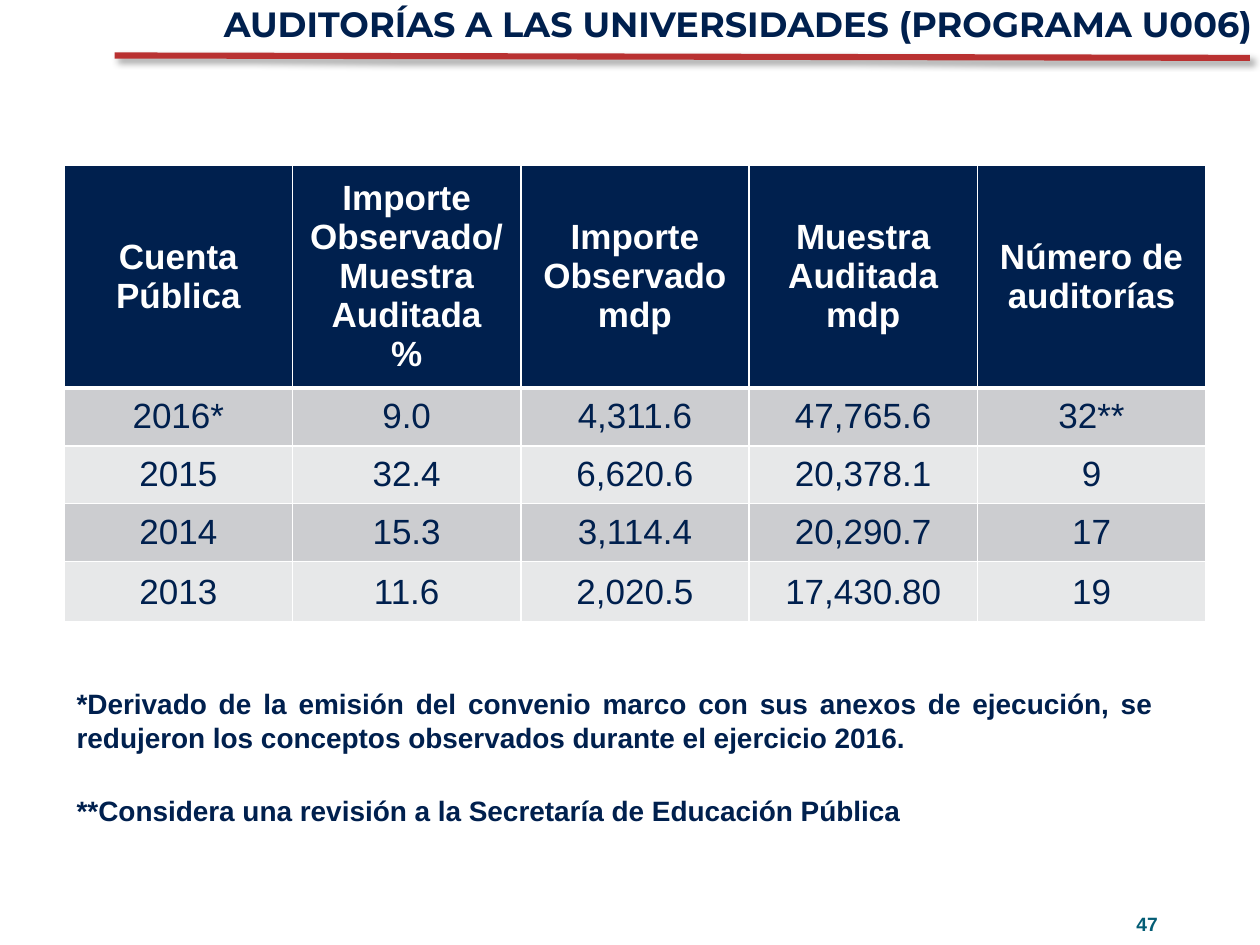
from lxml import etree
from pptx import Presentation
from pptx import util as u
from pptx.dml.color import RGBColor
from pptx.enum import shapes, text
from pptx.oxml import ns

NAVY, RED, TEAL, WHITE = "00204E", "B93131", "045D75", "FFFFFF"
BANDS = ("CCCDD0", "E7E8E9")
ALIGN = text.PP_ALIGN

HEADERS = [
    ["Cuenta Pública"],
    ["Importe Observado/Muestra Auditada", "%"],
    ["Importe Observado", "mdp"],
    ["Muestra Auditada", "mdp"],
    ["Número de auditorías"],
]
RECORDS = [
    ["2016*", "9.0", "4,311.6", "47,765.6", "32**"],
    ["2015", "32.4", "6,620.6", "20,378.1", "9"],
    ["2014", "15.3", "3,114.4", "20,290.7", "17"],
    ["2013", "11.6", "2,020.5", "17,430.80", "19"],
]
ROW_SHARES = [1.75, 0.46, 0.46, 0.46, 0.48]

deck = Presentation()
deck.slide_width, deck.slide_height = u.Inches(10), u.Inches(7.5)
page = deck.slides.add_slide(deck.slide_layouts[6])


def color(value):
    return RGBColor.from_string(value)


def across(percent):
    return round(deck.slide_width * percent / 100)


def down(percent):
    return round(deck.slide_height * percent / 100)


def place(left, top, width, height):
    return across(left), down(top), across(width), down(height)


def add_child(parent, tag, **attributes):
    return etree.SubElement(parent, ns.qn(tag), attributes)


def write(frame, lines, size, ink, align, bold=True, font="Arial"):
    for index, line in enumerate(lines):
        para = frame.add_paragraph() if index else frame.paragraphs[0]
        para.alignment = align
        span = para.add_run()
        span.text = line
        span.font.name, span.font.size = font, u.Pt(size)
        span.font.bold = bold
        span.font.color.rgb = color(ink)


def add_text(area, line, size, ink, align, font="Arial"):
    box = page.shapes.add_textbox(*place(*area))
    box.text_frame.word_wrap = True
    write(box.text_frame, [line], size, ink, align, font=font)


def add_heading(area, rule_start, rule_end):
    add_text(area, "AUDITORÍAS A LAS UNIVERSIDADES (PROGRAMA U006)",
             20, NAVY, ALIGN.RIGHT, "Montserrat")
    rule = page.shapes.add_connector(
        shapes.MSO_CONNECTOR.STRAIGHT,
        across(rule_start[0]), down(rule_start[1]),
        across(rule_end[0]), down(rule_end[1]))
    rule.line.color.rgb = color(RED)
    rule.line.width = u.Pt(3.5)
    effects = add_child(rule._element.spPr, "a:effectLst")
    shadow = add_child(effects, "a:outerShdw", blurRad=str(u.Pt(4)),
                       dist=str(u.Pt(3)), dir="2700000", rotWithShape="0")
    shade = add_child(shadow, "a:srgbClr", val="000000")
    add_child(shade, "a:alpha", val="40000")


def style_cell(cell, fill, top, bottom):
    properties = cell._tc.get_or_add_tcPr()
    for side, width in (("L", 1), ("R", 1), ("T", top), ("B", bottom)):
        border = add_child(properties, "a:ln" + side, w=str(u.Pt(width)))
        paint = add_child(border, "a:solidFill")
        add_child(paint, "a:srgbClr", val=WHITE)
    cell.fill.solid()
    cell.fill.fore_color.rgb = color(fill)
    cell.vertical_anchor = text.MSO_ANCHOR.MIDDLE


def add_audit_table(area):
    left, top, width, height = place(*area)
    rows = [HEADERS] + [[[value] for value in record] for record in RECORDS]
    table = page.shapes.add_table(
        len(rows), len(HEADERS), left, top, width, height).table
    for column in table.columns:
        column.width = width // len(HEADERS)
    for r, values in enumerate(rows):
        table.rows[r].height = round(height * ROW_SHARES[r] / sum(ROW_SHARES))
        header = r == 0
        for c, lines in enumerate(values):
            cell = table.cell(r, c)
            style_cell(cell, NAVY if header else BANDS[(r - 1) % 2],
                       3 if r == 1 else 1, 3 if header else 1)
            write(cell.text_frame, lines, 20, WHITE if header else NAVY,
                  ALIGN.CENTER, header)


def add_notes(first, second):
    add_text(first, "*Derivado de la emisión del convenio marco con sus anexos "
             "de ejecución, se redujeron los conceptos observados durante el "
             "ejercicio 2016.", 16, NAVY, ALIGN.JUSTIFY)
    add_text(second, "**Considera una revisión a la Secretaría de Educación "
             "Pública", 16, NAVY, ALIGN.JUSTIFY)


def add_page_number(area):
    add_text(area, "47", 11, TEAL, ALIGN.LEFT)


add_page_number((89.2, 95.87, 10.1, 4.13))
add_heading((5.1, -0.4, 95.3, 5.87), (99.2, 6.13), (9.1, 5.87))
add_audit_table((5.1, 17.47, 90.6, 48.13))
add_notes((5.1, 72, 87.4, 8.53), (5.1, 83.33, 76.8, 4.93))
deck.save("out.pptx")
